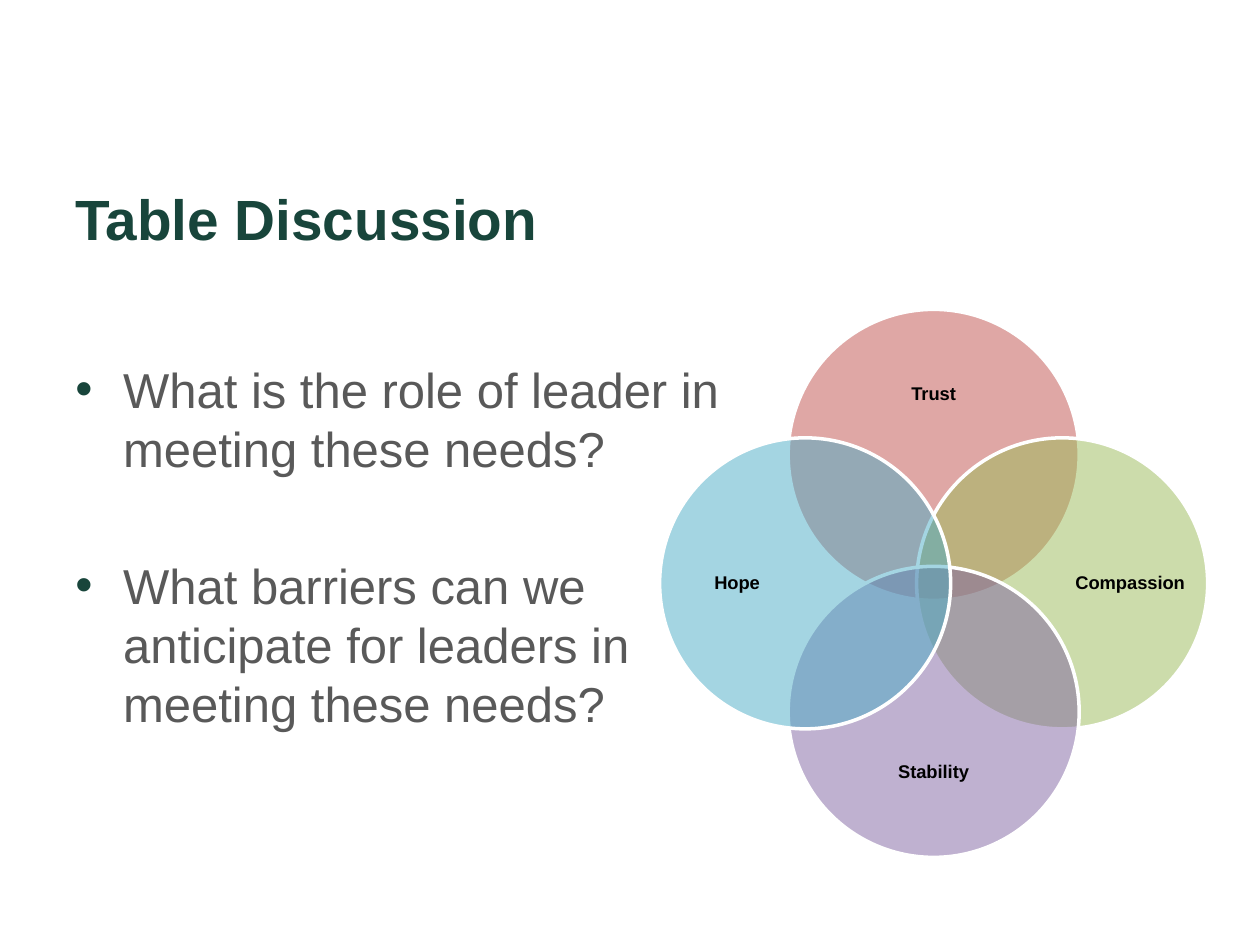
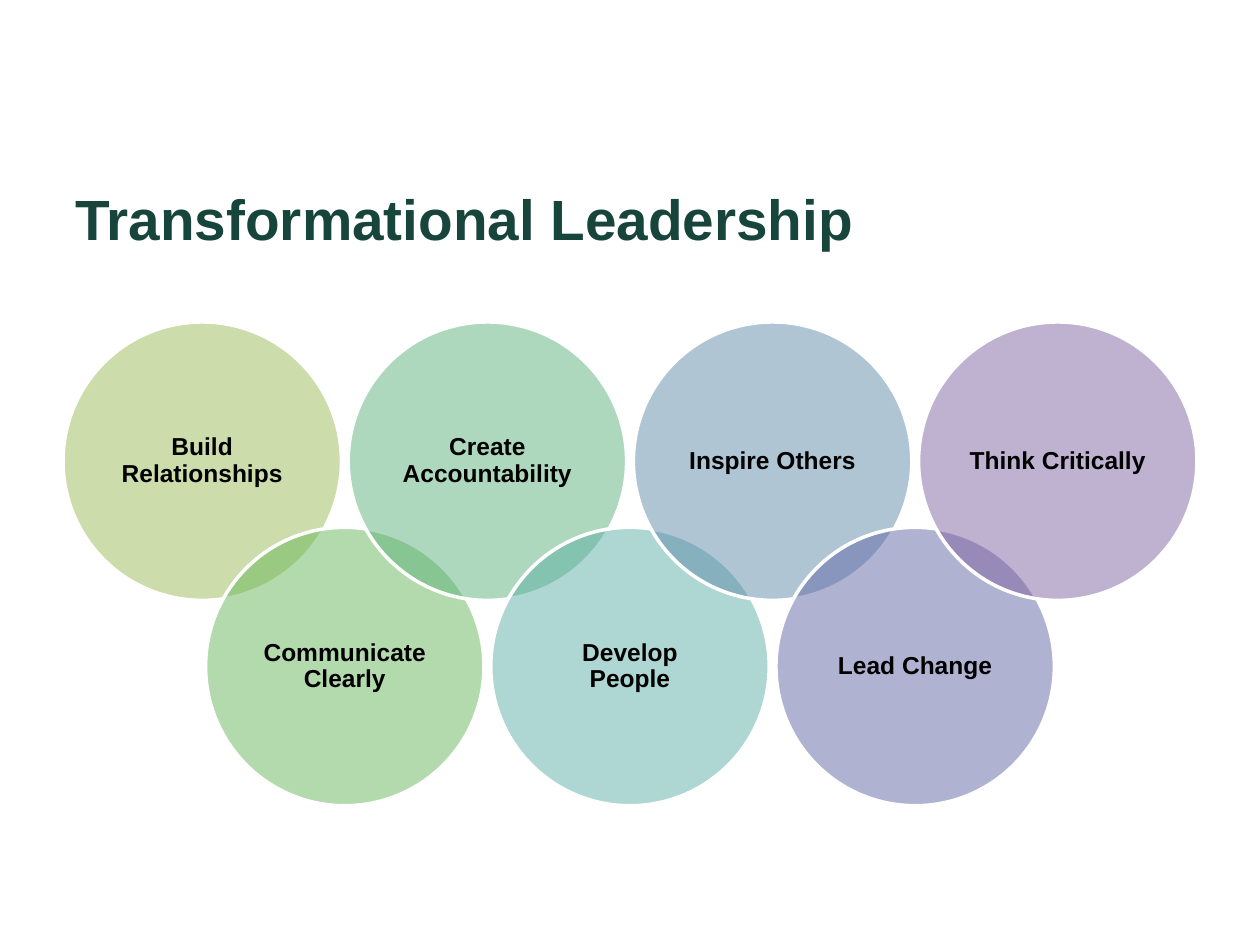
from lxml.etree import SubElement
from pptx import Presentation
from pptx.dml.color import RGBColor
from pptx.enum.shapes import MSO_SHAPE
from pptx.enum.text import MSO_ANCHOR, PP_ALIGN
from pptx.oxml.ns import qn
from pptx.util import Inches, Pt

FONT = "Arial"
HUES = {
    "title": "18453B", "body": "595959", "label": "000000", "rim": "FFFFFF",
    "red": "C0504D", "lime": "9BBB59", "purple": "8064A2", "aqua": "4BACC6",
    "green": "69B75B", "mint": "5CB37C", "teal": "5EAFA6",
    "steel": "608CAB", "indigo": "6267A6",
}

TALK = "Table Discussion"
ASKS = [
    "What is the role of leader in meeting these needs?",
    "What barriers can we anticipate for leaders in meeting these needs?",
]
# name, hue, direction from the centre (x, y)
NEEDS = [
    ("Trust", "red", 0, -1),
    ("Compassion", "lime", 1, 0),
    ("Stability", "purple", 0, 1),
    ("Hope", "aqua", -1, 0),
]

LEAD = "Transformational Leadership"
SKILLS = [
    ("Build Relationships", "lime"),
    ("Communicate Clearly", "green"),
    ("Create Accountability", "mint"),
    ("Develop People", "teal"),
    ("Inspire Others", "steel"),
    ("Lead Change", "indigo"),
    ("Think Critically", "purple"),
]


def color(hue):
    return RGBColor.from_string(HUES[hue])


def add_box(slide, x, y, wide, high, pads):
    """Add a wrapping text frame; pads are left, top, right, bottom."""
    box = slide.shapes.add_textbox(*map(Inches, (x, y, wide, high)))
    frame = box.text_frame
    frame.word_wrap = True
    (frame.margin_left, frame.margin_top,
     frame.margin_right, frame.margin_bottom) = map(Inches, pads)
    return frame


def add_run(para, text, size, hue, bold=False):
    run = para.add_run()
    run.text = text
    font = run.font
    font.name, font.size, font.bold = FONT, Pt(size), bold
    font.color.rgb = color(hue)


def add_title(slide, text):
    frame = add_box(slide, 0.5, 1.37, 9, 0.62, (0.1, 0.09, 0.1, 0))
    add_run(frame.paragraphs[0], text, 32.4, "title", True)


def add_dot(para):
    """Give the paragraph a hanging round bullet."""
    props = para._p.get_or_add_pPr()
    props.set("marL", str(Inches(0.38)))
    props.set("indent", str(-Inches(0.38)))
    tint = SubElement(props, qn("a:buClr"))
    SubElement(tint, qn("a:srgbClr"), val=HUES["title"])
    SubElement(props, qn("a:buFont"), typeface=FONT)
    SubElement(props, qn("a:buChar"), char="•")


def add_asks(slide):
    frame = add_box(slide, 0.5, 2.85, 5.3, 3.85, (0.1, 0, 0.05, 0))
    for i, ask in enumerate(ASKS):
        para = frame.add_paragraph() if i else frame.paragraphs[0]
        add_dot(para)
        para.line_spacing = Pt(33.7)
        para.space_before = Pt(44.6 if i else 0)
        add_run(para, ask, 28, "body")


def add_disc(slide, midx, midy, size, hue):
    """Add a half clear circle around a middle point."""
    disc = slide.shapes.add_shape(
        MSO_SHAPE.OVAL, Inches(midx - size / 2), Inches(midy - size / 2),
        Inches(size), Inches(size))
    disc.shadow.inherit = False
    disc.fill.solid()
    disc.fill.fore_color.rgb = color(hue)
    tint = disc.fill._xPr.find(qn("a:solidFill"))[0]
    SubElement(tint, qn("a:alpha"), val="50000")
    disc.line.color.rgb = color("rim")
    disc.line.width = Pt(2)


def add_label(slide, midx, midy, wide, high, text, size, pad=0):
    frame = add_box(slide, midx - wide / 2, midy - high / 2, wide, high, [pad] * 4)
    frame.vertical_anchor = MSO_ANCHOR.MIDDLE
    para = frame.paragraphs[0]
    para.alignment = PP_ALIGN.CENTER
    para.line_spacing = 0.9
    add_run(para, text, size, "label", True)


def add_venn(slide):
    midx, midy, arm, size = 7.41, 4.63, 1.02, 2.31
    for name, hue, dx, dy in NEEDS:
        add_disc(slide, midx + dx * arm, midy + dy * arm, size, hue)
        wide, high = (0.89, 1.78) if dx else (1.78, 0.73)
        add_label(slide, midx + dx * 1.56, midy + dy * 1.5, wide, high, name, 10.5)


def add_chain(slide):
    """Overlap the skill circles in two staggered rows."""
    size, left, span = 2.21, 0.5, 9
    step = (span - size) / (len(SKILLS) - 1)
    for i, (name, hue) in enumerate(SKILLS):
        midx = left + size / 2 + i * step
        midy = 3.66 + i % 2 * 1.63
        add_disc(slide, midx, midy, size, hue)
        add_label(slide, midx, midy, 1.56, 1.56, name, 14, 0.06)


def main():
    deck = Presentation()
    deck.slide_width, deck.slide_height = Inches(10), Inches(7.5)
    for title, parts in [(TALK, (add_asks, add_venn)), (LEAD, (add_chain,))]:
        slide = deck.slides.add_slide(deck.slide_layouts[6])
        add_title(slide, title)
        for part in parts:
            part(slide)
    deck.save("out.pptx")


if __name__ == "__main__":
    main()
